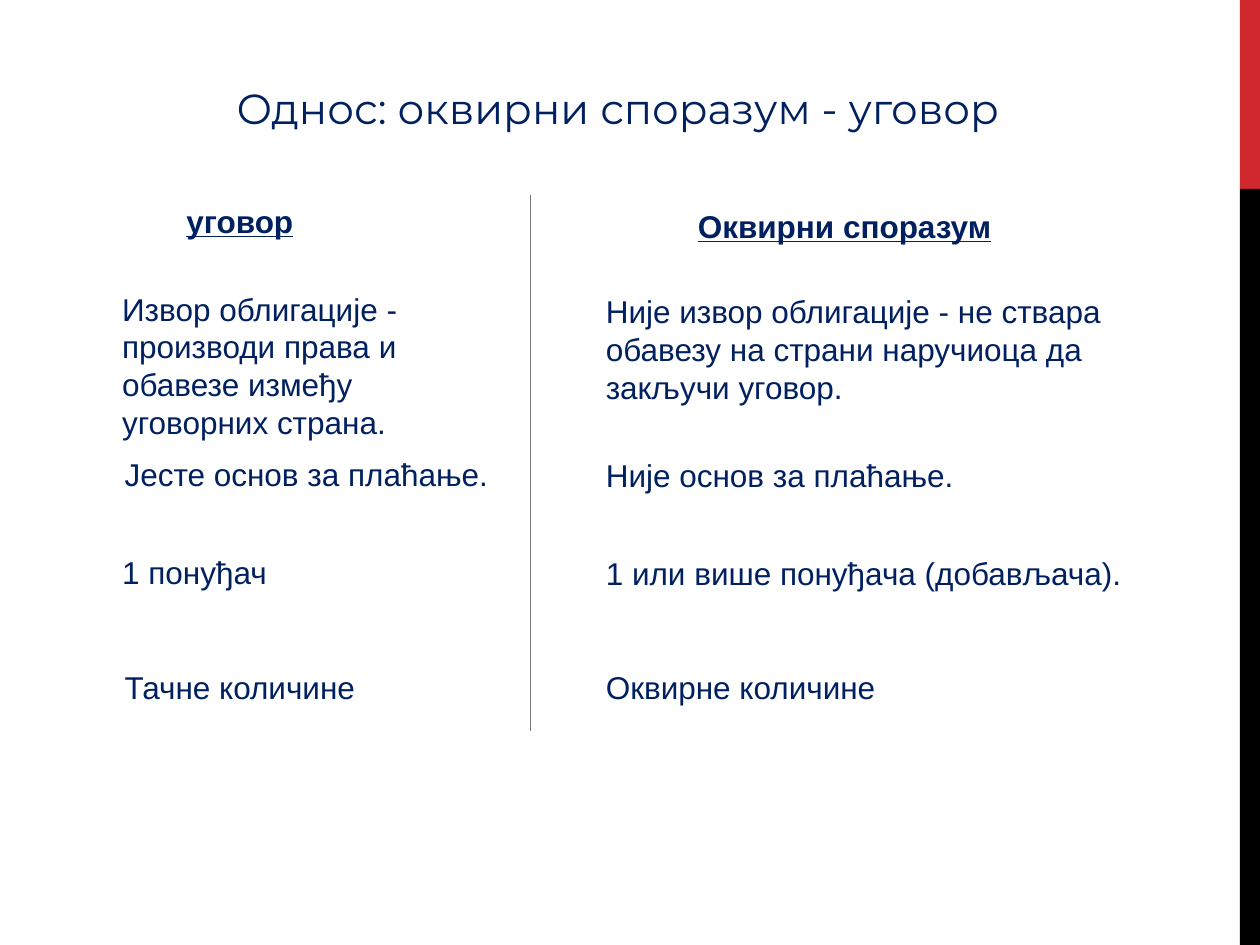
import pptx
import pptx.util
import pptx.dml.color
import pptx.enum.shapes
import pptx.enum.text
from lxml import etree
from pptx.util import Pt

COLORS = {"navy": "002060", "red": "D1282E", "black": "000000", "grey": "777777"}
SHAPES = pptx.enum.shapes.MSO_SHAPE

CONTRACT = [
    ("уговор", 36.7, 0, 85, 51, True, True),
    ("Извор облигације - производи права и обавезе између уговорних страна.",
     0, 50.4, 229.7, 94.5, True, False),
    ("Јесте основ за плаћање.", 1.4, 144.7, 224.6, 29, False, False),
    ("1 понуђач", 0, 200.9, 98, 29, False, False),
    ("Тачне количине", 1.4, 266.4, 147.6, 29, False, False),
]
FRAMEWORK = [
    ("Оквирни споразум", 52.6, 2.9, 198.7, 29, True, True),
    ("Није извор облигације - не ствара обавезу на страни наручиоца да закључи уговор.",
     0, 51.8, 311.8, 72.7, True, False),
    ("Није основ за плаћање.", 0, 145.4, 219.6, 29, False, False),
    ("1 или више понуђача (добављача).", 0, 201.6, 311.8, 29, False, False),
    ("Оквирне количине", 0, 266.4, 170, 29, False, False),
]


def rgb(name):
    return pptx.dml.color.RGBColor.from_string(COLORS[name])


def add_run(p, text, font, size, heading=False):
    r = p.add_run()
    r.text = text
    r.font.name = font
    r.font.size = Pt(size)
    r.font.color.rgb = rgb("navy")
    if heading:
        r.font.bold = True
        r.font.underline = True


def add_side_band(s, x, y, w, h):
    red_h = h / 5
    for color, top, height in (("red", y, red_h), ("black", y + red_h, h - red_h)):
        sp = s.shapes.add_shape(SHAPES.RECTANGLE, Pt(x), Pt(top), Pt(w), Pt(height))
        sp.shadow.inherit = False
        sp.fill.solid()
        sp.fill.fore_color.rgb = rgb(color)
        sp.line.fill.background()


def add_title(s, x, y, w, h):
    sp = s.shapes.add_shape(SHAPES.ROUNDED_RECTANGLE, Pt(x), Pt(y), Pt(w), Pt(h))
    sp.adjustments[0] = 0.22
    sp.shadow.inherit = False
    sp.fill.background()
    sp.line.fill.background()
    tf = sp.text_frame
    tf.word_wrap = True
    tf.vertical_anchor = pptx.enum.text.MSO_ANCHOR.BOTTOM
    p = tf.paragraphs[0]
    p.alignment = pptx.enum.text.PP_ALIGN.CENTER
    p.line_spacing = 0.8
    add_run(p, "Однос: оквирни споразум - уговор", "Montserrat", 24)


def add_column(s, x, y, items):
    for text, dx, dy, w, h, wrap, heading in items:
        sp = s.shapes.add_textbox(Pt(x + dx), Pt(y + dy), Pt(w), Pt(h))
        tf = sp.text_frame
        tf.word_wrap = wrap
        tf.auto_size = pptx.enum.text.MSO_AUTO_SIZE.SHAPE_TO_FIT_TEXT
        add_run(tf.paragraphs[0], text, "Arial", 18, heading)


def add_divider(s, x, y, h):
    sp = s.shapes.add_connector(
        pptx.enum.shapes.MSO_CONNECTOR.STRAIGHT, Pt(x), Pt(y), Pt(x), Pt(y + h))
    sp.line.color.rgb = rgb("grey")
    sp.line.width = Pt(1)
    etree.SubElement(sp._element.spPr, pptx.oxml.ns.qn("a:effectLst"))


def main():
    prs = pptx.Presentation()
    prs.slide_width, prs.slide_height = Pt(720), Pt(540)
    s = prs.slides.add_slide(prs.slide_layouts[6])
    add_side_band(s, 708.5, 0, 11.5, 540)
    add_title(s, 30.2, 30.2, 645.8, 52.6)
    add_column(s, 62.7, 111.6, CONTRACT)
    add_column(s, 339.1, 111.6, FRAMEWORK)
    add_divider(s, 303.1, 111.6, 306)
    prs.save("out.pptx")


if __name__ == "__main__":
    main()
